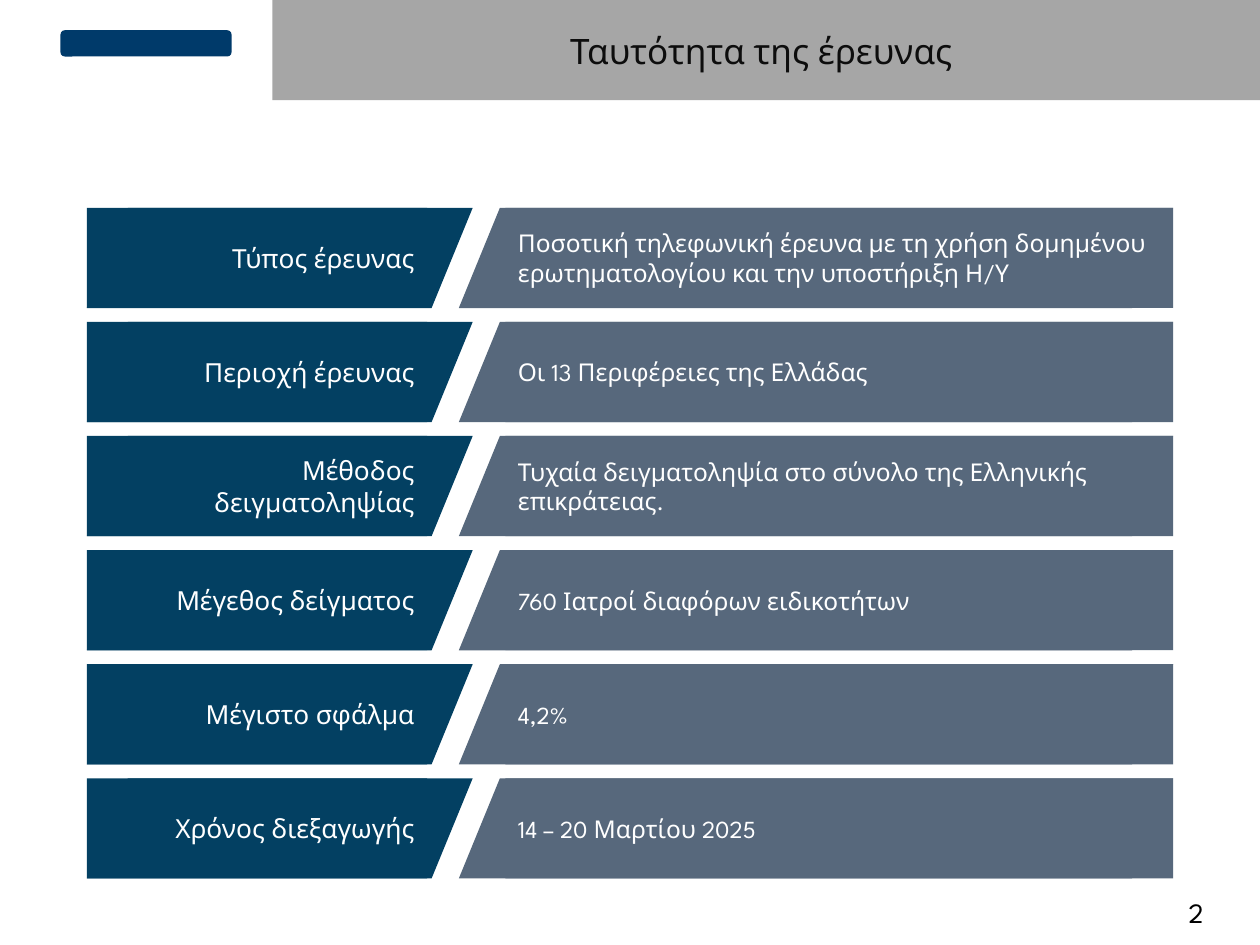
"""Build the survey identity slide: a title bar and six label and value rows."""
from pptx import Presentation
from pptx.dml.color import RGBColor
from pptx.enum.shapes import MSO_SHAPE
from pptx.enum.text import MSO_ANCHOR, MSO_AUTO_SIZE, PP_ALIGN
from pptx.util import Cm, Pt

RECT, SLANT, ROUNDED = MSO_SHAPE.RECTANGLE, MSO_SHAPE.PARALLELOGRAM, MSO_SHAPE.ROUNDED_RECTANGLE
LEFT, CENTER, RIGHT = PP_ALIGN.LEFT, PP_ALIGN.CENTER, PP_ALIGN.RIGHT

THEME = {
    "font": "League Spartan",
    "bar": "A6A6A6", "title": "0D0D0D", "label": "034062", "value": "57687C",
    "logo": "003A6A", "light": "FFFFFF", "dark": "000000",
    "title_size": 20, "label_size": 15, "value_size": 14, "number_size": 16,
}
ROWS = [
    ("Τύπος έρευνας", "Ποσοτική τηλεφωνική έρευνα με τη χρήση δομημένου ερωτηματολογίου και την υποστήριξη Η/Υ"),
    ("Περιοχή έρευνας", "Οι 13 Περιφέρειες της Ελλάδας"),
    ("Μέθοδος δειγματοληψίας", "Τυχαία δειγματοληψία στο σύνολο της Ελληνικής επικράτειας."),
    ("Μέγεθος δείγματος", "760 Ιατροί διαφόρων ειδικοτήτων"),
    ("Μέγιστο σφάλμα", "4,2%"),
    ("Χρόνος διεξαγωγής", "14 – 20 Μαρτίου 2025"),
]
TOP, PITCH, HEIGHT = 4.19, 2.3, 2.02
SLANTS = [("label", 1.75, 7.78, 0.41), ("value", 9.25, 14.4, 0.41)]
PANELS = [("label", 1.75, 6.86, RIGHT), ("value", 10.19, 13.46, LEFT)]


def add_block(s, kind, box, color):
    sp = s.shapes.add_shape(kind, *map(Cm, box))
    sp.shadow.inherit = False
    sp.fill.solid()
    sp.fill.fore_color.rgb = RGBColor.from_string(THEME[color])
    sp.line.fill.background()
    return sp


def write(sp, text, size, color, align):
    tf = sp.text_frame
    frame = {"word_wrap": True, "auto_size": MSO_AUTO_SIZE.NONE, "vertical_anchor": MSO_ANCHOR.MIDDLE}
    for name, value in frame.items():
        setattr(tf, name, value)
    p = tf.paragraphs[0]
    p.alignment = align
    r = p.add_run()
    r.text = text
    for name, value in {"name": THEME["font"], "size": Pt(THEME[size])}.items():
        setattr(r.font, name, value)
    r.font.color.rgb = RGBColor.from_string(THEME[color])


prs = Presentation()
prs.slide_width, prs.slide_height = Cm(25.4), Cm(19.05)
s = prs.slides.add_slide(prs.slide_layouts[5])

title = s.shapes.title
place = {"left": Cm(5.49), "top": Cm(0), "width": Cm(19.96), "height": Cm(HEIGHT)}
for name, value in place.items():
    setattr(title, name, value)
title.fill.solid()
title.fill.fore_color.rgb = RGBColor.from_string(THEME["bar"])
title.text_frame.margin_right = Cm(0.5)
write(title, "Ταυτότητα της έρευνας", "title_size", "title", CENTER)

number = s.shapes.add_textbox(Cm(22.83), Cm(17.73), Cm(2.57), Cm(1.32))
write(number, "2", "number_size", "dark", CENTER)

for i, texts in enumerate(ROWS):
    top = TOP + i * PITCH
    for part, left, width, slope in SLANTS:
        sp = add_block(s, SLANT, (left, top, width, HEIGHT), part)
        sp.adjustments[0] = slope
    for (part, left, width, align), text in zip(PANELS, texts):
        sp = add_block(s, RECT, (left, top, width, HEIGHT), part)
        write(sp, text, f"{part}_size", "light", align)

add_block(s, ROUNDED, (1.22, 0.61, 3.45, 0.53), "logo")

prs.save("out.pptx")
